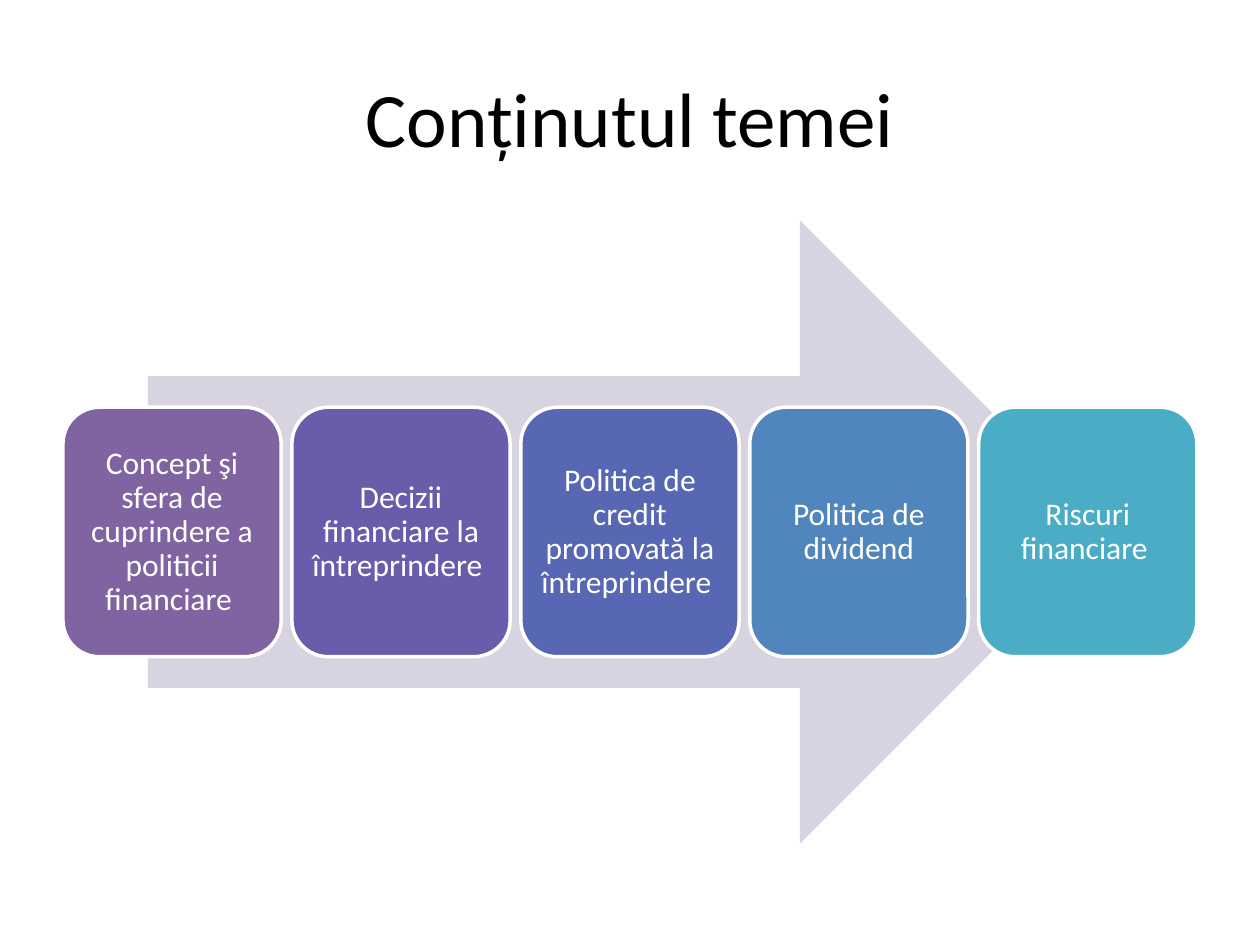
from pptx import Presentation
from pptx.dml.color import RGBColor
from pptx.enum.shapes import MSO_SHAPE as Kind
from pptx.enum.text import MSO_ANCHOR as Anchor, PP_ALIGN as Align
from pptx.util import Cm, Pt

TITLE = "Conținutul temei"
STEPS = [
    ("Concept şi sfera de cuprindere a politicii financiare ", "8064A2"),
    ("Decizii financiare la întreprindere ", "685DAB"),
    ("Politica de credit promovată la întreprindere ", "5767B4"),
    ("Politica de dividend", "5185BD"),
    ("Riscuri financiare ", "4BACC6"),
]
LEFT, WIDE = 1.27, 22.86
CARD_W, CARD_H, CARD_TOP = 4.4, 5.03, 8.21


def paint(color, hue):
    color.rgb = RGBColor.from_string(hue)


def write(shape, text, size=18, hue="FFFFFF", pad=0.18, space=0.9):
    frame = shape.text_frame
    frame.word_wrap = True
    frame.vertical_anchor = Anchor.MIDDLE
    frame.margin_left = frame.margin_right = Cm(pad)
    frame.margin_top = frame.margin_bottom = Cm(pad)
    para = frame.paragraphs[0]
    para.alignment = Align.CENTER
    para.line_spacing = space
    run = para.add_run()
    run.text = text
    run.font.name = "Calibri"
    run.font.size = Pt(size)
    paint(run.font.color, hue)


def draw(slide, kind, box, hue, edge=None):
    shape = slide.shapes.add_shape(kind, *map(Cm, box))
    shape.shadow.inherit = False
    shape.fill.solid()
    paint(shape.fill.fore_color, hue)
    if edge:
        paint(shape.line.color, edge)
        shape.line.width = Pt(2)
    else:
        shape.line.fill.background()
    return shape


def main():
    deck = Presentation()
    deck.slide_width, deck.slide_height = Cm(25.4), Cm(19.05)
    slide = deck.slides.add_slide(deck.slide_layouts[6])

    title = slide.shapes.add_textbox(Cm(LEFT), Cm(0.76), Cm(WIDE), Cm(3.18))
    write(title, TITLE, size=44, hue="000000", space=1.0)

    draw(slide, Kind.RIGHT_ARROW, (2.98, 4.44, 19.43, 12.57), "D8D3E0")
    pitch = (WIDE - CARD_W) / (len(STEPS) - 1)
    for i, (text, hue) in enumerate(STEPS):
        box = (LEFT + i * pitch, CARD_TOP, CARD_W, CARD_H)
        card = draw(slide, Kind.ROUNDED_RECTANGLE, box, hue, edge="FFFFFF")
        write(card, text)

    deck.save("out.pptx")


if __name__ == "__main__":
    main()
